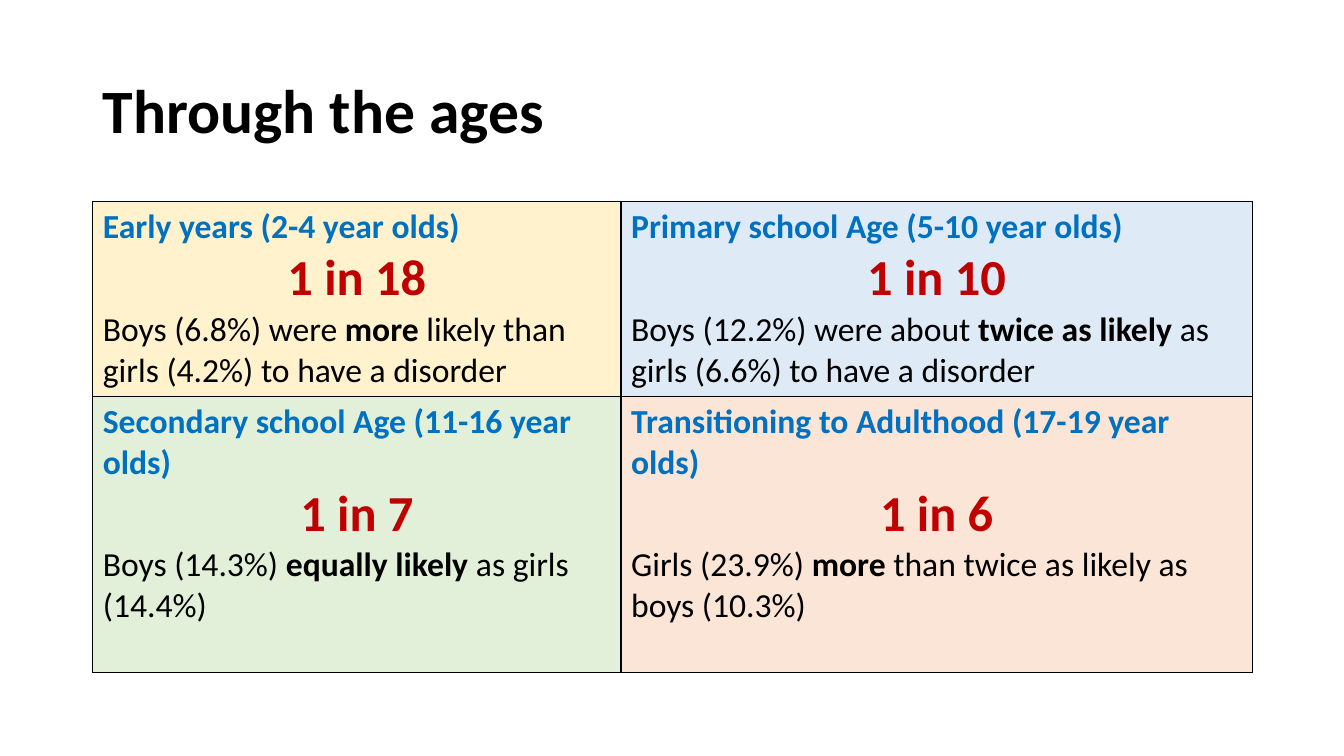
import pptx
import pptx.util
import pptx.dml.color
import pptx.enum.text
import pptx.oxml
import pptx.oxml.ns

Inches, Pt = pptx.util.Inches, pptx.util.Pt
PP_ALIGN = pptx.enum.text.PP_ALIGN

COLOURS = {
    "text": "000000", "age": "0070C0", "rate": "C00000",
    "early": "FFF2CC", "primary": "DEEBF7",
    "secondary": "E2F0D9", "adulthood": "FBE5D6",
}

# fill, age group, rate, finding as (plain, bold, plain)
AGE_GROUPS = [
    ("early", "Early years (2-4 year olds)", "1 in 18",
     ("Boys (6.8%) were ", "more", " likely than girls (4.2%) to have a disorder")),
    ("primary", "Primary school Age (5-10 year olds)", "1 in 10",
     ("Boys (12.2%) were about ", "twice as likely ", "as girls (6.6%) to have a disorder")),
    ("secondary", "Secondary school Age (11-16 year olds)", "1 in 7",
     ("Boys (14.3%) ", "equally likely ", "as girls (14.4%)")),
    ("adulthood", "Transitioning to Adulthood (17-19 year olds)", "1 in 6",
     ("Girls (23.9%) ", "more", " than twice as likely as boys (10.3%)")),
]


def format_run(run, size, colour, bold):
    run.font.name = "Calibri"
    run.font.size = Pt(size)
    run.font.bold = bold
    run.font.color.rgb = pptx.dml.color.RGBColor.from_string(COLOURS[colour])


def add_borders(cell):
    """Draw a 1 pt line on all four sides; call before setting the fill."""
    for side in ("lnL", "lnR", "lnT", "lnB"):
        cell._tc.get_or_add_tcPr().append(pptx.oxml.parse_xml(
            f'<a:{side} {pptx.oxml.ns.nsdecls("a")} w="{Pt(1)}"><a:solidFill>'
            f'<a:srgbClr val="{COLOURS["text"]}"/></a:solidFill></a:{side}>'))


prs = pptx.Presentation()
prs.slide_width, prs.slide_height = Inches(13.33), Inches(7.5)
slide = prs.slides.add_slide(prs.slide_layouts[5])

title = slide.shapes.title
title.left, title.top = Inches(0.92), Inches(0.4)
title.width, title.height = Inches(11.5), Inches(1.45)
title.text_frame.text = "Through the ages"
title.text_frame.vertical_anchor = pptx.enum.text.MSO_ANCHOR.MIDDLE
heading = title.text_frame.paragraphs[0]
heading.alignment = PP_ALIGN.LEFT
heading.line_spacing = 0.9
format_run(heading.runs[0], 44, "text", True)

ages = slide.shapes.add_table(2, 2, Inches(0.92), Inches(2), Inches(11.5), Inches(4.67)).table
ages.first_row = ages.horz_banding = False
for column, width in zip(ages.columns, (5.24, 6.26)):
    column.width = Inches(width)
for row, height in zip(ages.rows, (1.93, 2.74)):
    row.height = Inches(height)

for cell, (fill, age, rate, finding) in zip(ages.iter_cells(), AGE_GROUPS):
    add_borders(cell)
    cell.fill.solid()
    cell.fill.fore_color.rgb = pptx.dml.color.RGBColor.from_string(COLOURS[fill])

    cell.text_frame.text = f"{age}\n{rate}"
    age_line, rate_line = cell.text_frame.paragraphs
    format_run(age_line.runs[0], 24, "age", True)
    rate_line.alignment = PP_ALIGN.CENTER
    format_run(rate_line.runs[0], 36, "rate", True)

    finding_line = cell.text_frame.add_paragraph()
    for words, bold in zip(finding, (False, True, False)):
        run = finding_line.add_run()
        run.text = words
        format_run(run, 24, "text", bold)

prs.save("out.pptx")
